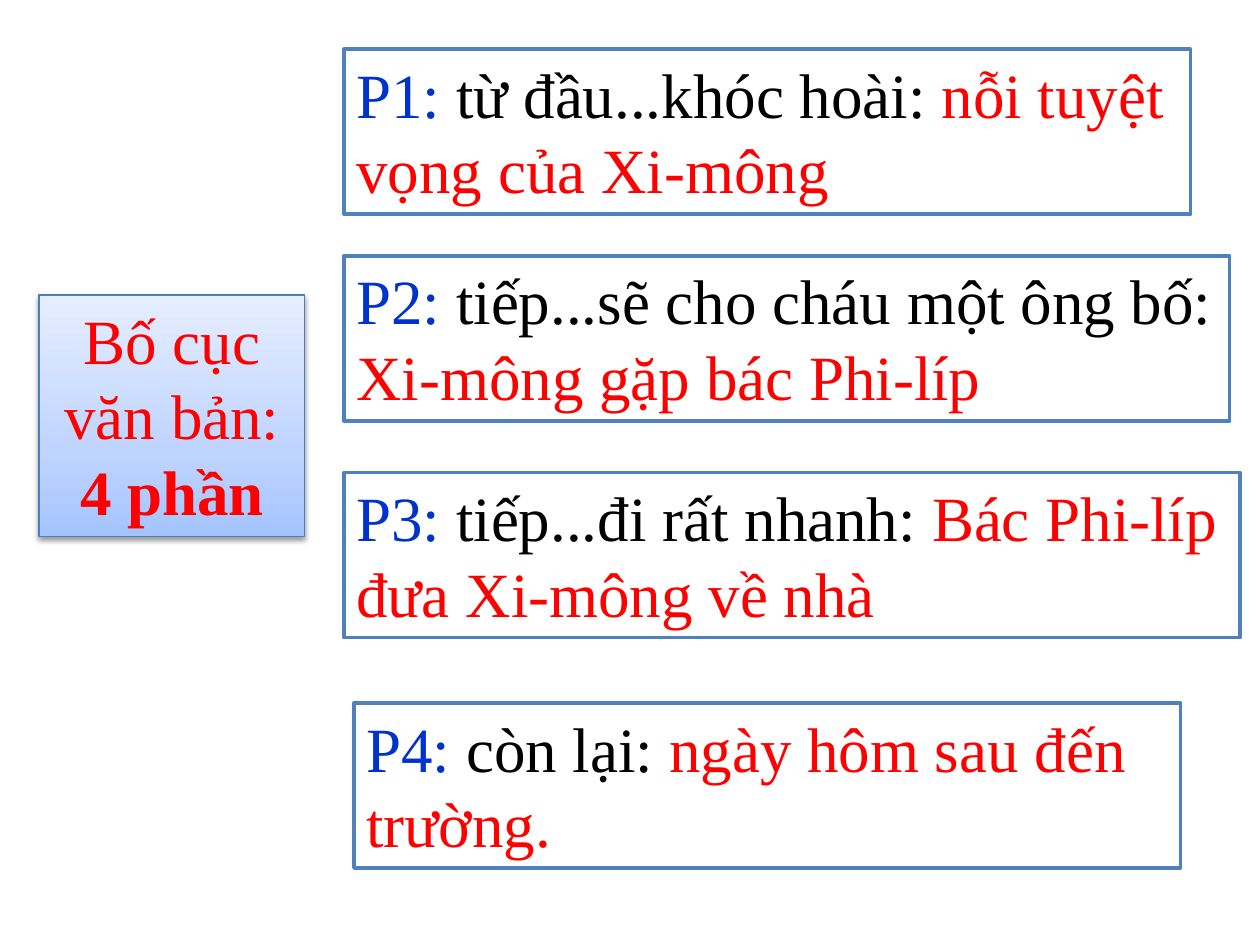
from copy import deepcopy

from pptx import Presentation
from pptx import util as u
from pptx.dml.color import RGBColor
from pptx.enum import text
from pptx.oxml import parse_xml
from pptx.oxml.ns import nsdecls, qn

COLORS = {
    "label": "0033CC", "body": "000000", "accent": "FF0000", "panel": "FFFFFF",
    "border": "4F81BD", "title_border": "4B7EBC",
}
TITLE_STOPS = [(0, "A4C4FF"), (0.35, "BFD4FF"), (1, "E6EEFF")]
PARTS = [
    ((2.73, 0.39, 6.72, 1.31), "P1: ", "từ đầu...khóc hoài: ", "nỗi tuyệt vọng của Xi-mông"),
    ((2.73, 2.03, 7.03, 1.31), "P2: ", "tiếp...sẽ cho cháu một ông bố: ", "Xi-mông gặp bác Phi-líp"),
    ((2.73, 3.75, 7.11, 1.31), "P3: ", "tiếp...đi rất nhanh: ", "Bác Phi-líp đưa Xi-mông về nhà"),
    ((2.81, 5.58, 6.56, 1.31), "P4: ", "còn lại: ", "ngày hôm sau đến trường."),
]


def color(name):
    """Return the named colour."""
    return RGBColor.from_string(COLORS[name])


def add_box(page, area, border, width):
    """Add an outlined, wrapping text box and return it with its paragraph."""
    box = page.shapes.add_textbox(*(u.Inches(length) for length in area))
    box.line.color.rgb = color(border)
    box.line.width = u.Pt(width)
    frame = box.text_frame
    frame.word_wrap = True
    frame.auto_size = text.MSO_AUTO_SIZE.SHAPE_TO_FIT_TEXT
    para = frame.paragraphs[0]
    para.font.name = "Times New Roman"
    para.font.size = u.Pt(36)
    return box, para


def add_span(para, words, tint):
    """Add a coloured run to a paragraph."""
    span = para.add_run()
    span.text = words
    span.font.color.rgb = color(tint)
    return span


def add_part(page, area, label, extent, summary):
    """Add one part of the outline."""
    box, para = add_box(page, area, "border", 2)
    box.fill.solid()
    box.fill.fore_color.rgb = color("panel")
    for words, tint in ((label, "label"), (extent, "body"), (summary, "accent")):
        add_span(para, words, tint)


def add_title(page, area):
    """Add the shaded title panel with its soft shadow."""
    box, para = add_box(page, area, "title_border", 0.75)
    box.fill.gradient()
    box.fill.gradient_angle = 90
    properties = box._element.spPr
    stop_list = properties.find(qn("a:gradFill")).find(qn("a:gsLst"))
    stop_list.insert(1, deepcopy(stop_list[0]))
    for stop, (position, tint) in zip(box.fill.gradient_stops, TITLE_STOPS):
        stop.position = position
        stop.color.rgb = RGBColor.from_string(tint)
    properties.append(parse_xml(
        f'<a:effectLst {nsdecls("a")}><a:outerShdw blurRad="{u.Pt(3.1)}" dist="{u.Pt(1.6)}" '
        'dir="5400000" rotWithShape="0"><a:srgbClr val="000000"><a:alpha val="38000"/>'
        '</a:srgbClr></a:outerShdw></a:effectLst>'))
    para.alignment = text.PP_ALIGN.CENTER
    add_span(para, "Bố cục văn bản: ", "accent")
    add_span(para, "4 phần", "accent").font.bold = True


def main():
    """Build the outline slide."""
    deck = Presentation()
    deck.slide_width, deck.slide_height = u.Inches(10), u.Inches(7.5)
    page = deck.slides.add_slide(deck.slide_layouts[6])
    add_title(page, (0.31, 2.34, 2.11, 1.92))
    for part in PARTS:
        add_part(page, *part)
    deck.save("out.pptx")


if __name__ == "__main__":
    main()
